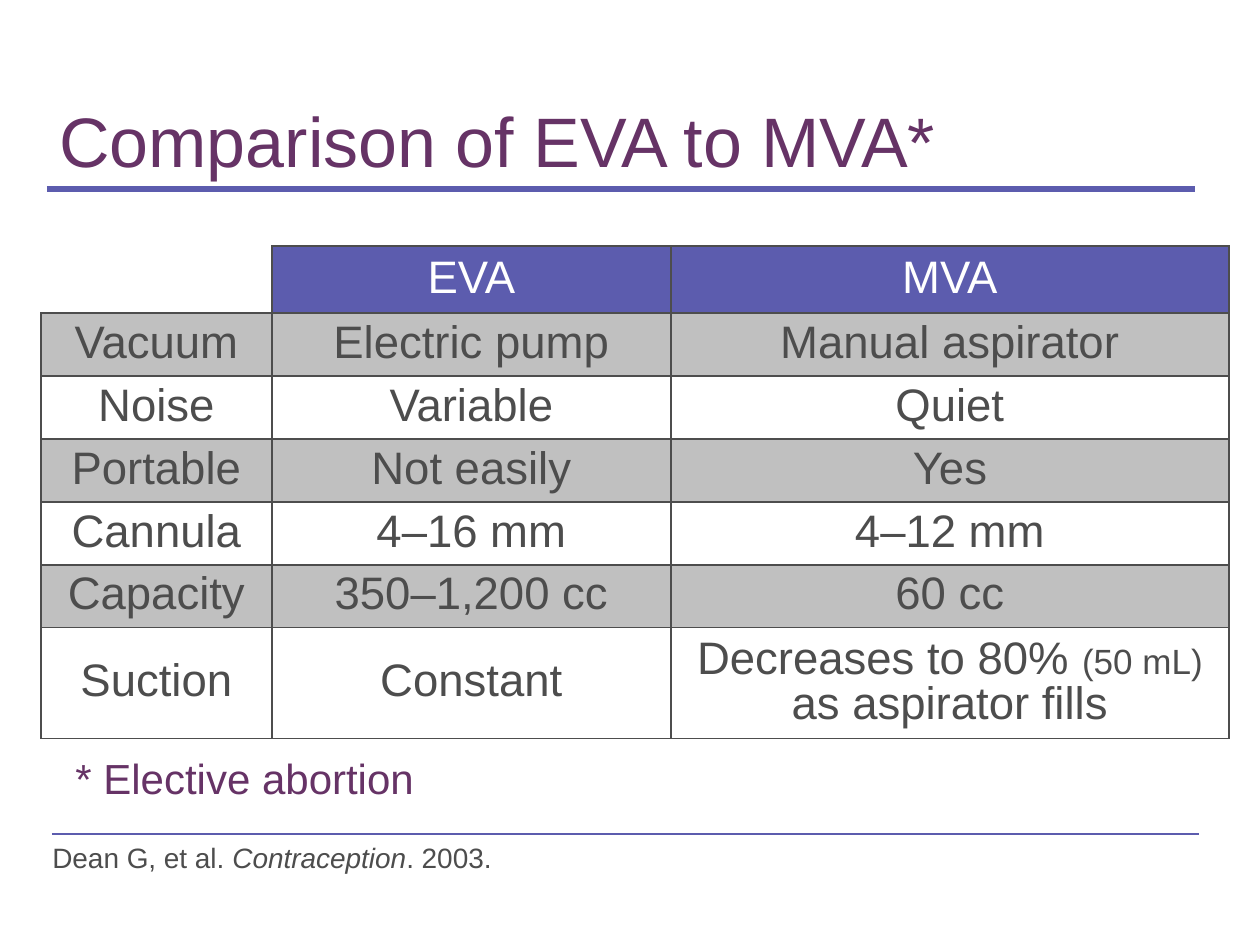
from lxml.etree import SubElement
from pptx import Presentation
from pptx.dml.color import RGBColor
from pptx.enum.shapes import MSO_CONNECTOR
from pptx.enum.text import MSO_ANCHOR, PP_ALIGN
from pptx.oxml.ns import qn
from pptx.util import Pt

PX = 914400 // 126
FONT = "Arial"
COLORS = {"accent": "5C5CAE", "title": "663366", "text": "4D4D4D",
          "band": "C0C0C0", "white": "FFFFFF"}

TITLE = [("Comparison of EVA to MVA*", {})]
FOOTNOTE = [("* Elective abortion", {})]
CITATION = [("Dean G, et al. ", {}), ("Contraception", {"italic": True}), (". 2003.", {})]
ROWS = [
    ("", "EVA", "MVA"),
    ("Vacuum", "Electric pump", "Manual aspirator"),
    ("Noise", "Variable", "Quiet"),
    ("Portable", "Not easily", "Yes"),
    ("Cannula", "4–16 mm", "4–12 mm"),
    ("Capacity", "350–1,200 cc", "60 cc"),
    ("Suction", "Constant",
     [("Decreases to 80% ", {}), ("(50 mL) ", {"size": 20}), ("as aspirator fills", {})]),
]
TABLE_LEFT, TABLE_TOP = 41, 246
COL_WIDTHS = [231, 399, 558]
ROW_HEIGHTS = [67] + [63] * 5 + [111]
RULES = [(47, 1195, 189, 3), (52, 1199, 834, 0.75)]  # left, right, y, points


def px(n):
    return n * PX


def rgb(name):
    return RGBColor.from_string(COLORS[name])


def write(p, runs, size, color):
    for text, style in runs:
        r = p.add_run()
        r.text = text
        r.font.name = FONT
        r.font.size = Pt(style.get("size", size))
        r.font.italic = style.get("italic", False)
        r.font.color.rgb = rgb(color)


def add_text(s, box, runs, size, color, anchor=MSO_ANCHOR.TOP, wrap=True, spacing=1.0):
    tf = s.shapes.add_textbox(*map(px, box)).text_frame
    tf.word_wrap = wrap
    tf.vertical_anchor = anchor
    tf.paragraphs[0].line_spacing = spacing
    write(tf.paragraphs[0], runs, size, color)


def add_rule(s, left, right, y, width):
    line = s.shapes.add_connector(MSO_CONNECTOR.STRAIGHT, px(left), px(y), px(right), px(y))
    line.line.color.rgb = rgb("accent")
    line.line.width = Pt(width)
    SubElement(line._element.spPr, qn("a:effectLst"))


def set_borders(cell, visible):
    """Draw the sides named in visible; fills must be set afterwards."""
    tcPr = cell._tc.get_or_add_tcPr()
    for side in "LRTB":
        ln = SubElement(tcPr, qn(f"a:ln{side}"), w=str(Pt(1)))
        if side in visible:
            fill = SubElement(ln, qn("a:solidFill"))
            SubElement(fill, qn("a:srgbClr"), val=COLORS["text"])
        else:
            SubElement(ln, qn("a:noFill"))


def add_comparison(s):
    table = s.shapes.add_table(
        len(ROWS), len(COL_WIDTHS), px(TABLE_LEFT), px(TABLE_TOP),
        px(sum(COL_WIDTHS)), px(sum(ROW_HEIGHTS))).table
    table.first_row = table.horz_banding = False
    for col, width in zip(table.columns, COL_WIDTHS):
        col.width = px(width)
    for i, values in enumerate(ROWS):
        table.rows[i].height = px(ROW_HEIGHTS[i])
        row_fill = "accent" if i == 0 else "band" if i % 2 else "white"
        for j, value in enumerate(values):
            cell = table.cell(i, j)
            set_borders(cell, "LRTB" if value else "RB")
            if not value:
                cell.fill.background()
                continue
            cell.fill.solid()
            cell.fill.fore_color.rgb = rgb(row_fill)
            cell.vertical_anchor = MSO_ANCHOR.MIDDLE
            p = cell.text_frame.paragraphs[0]
            p.alignment = PP_ALIGN.CENTER
            p.line_spacing = 0.9
            runs = [(value, {})] if isinstance(value, str) else value
            write(p, runs, 26, "text" if i else "white")


def main():
    prs = Presentation()
    prs.slide_width, prs.slide_height = px(1260), px(945)
    s = prs.slides.add_slide(prs.slide_layouts[6])
    for rule in RULES:
        add_rule(s, *rule)
    add_text(s, (47, 32, 1183, 157), TITLE, 40, "title", MSO_ANCHOR.BOTTOM, spacing=0.9)
    add_text(s, (40, 834, 470, 47), CITATION, 16, "text", wrap=False)
    add_comparison(s)
    add_text(s, (63, 746, 501, 63), FOOTNOTE, 24, "title")
    prs.save("out.pptx")


if __name__ == "__main__":
    main()
